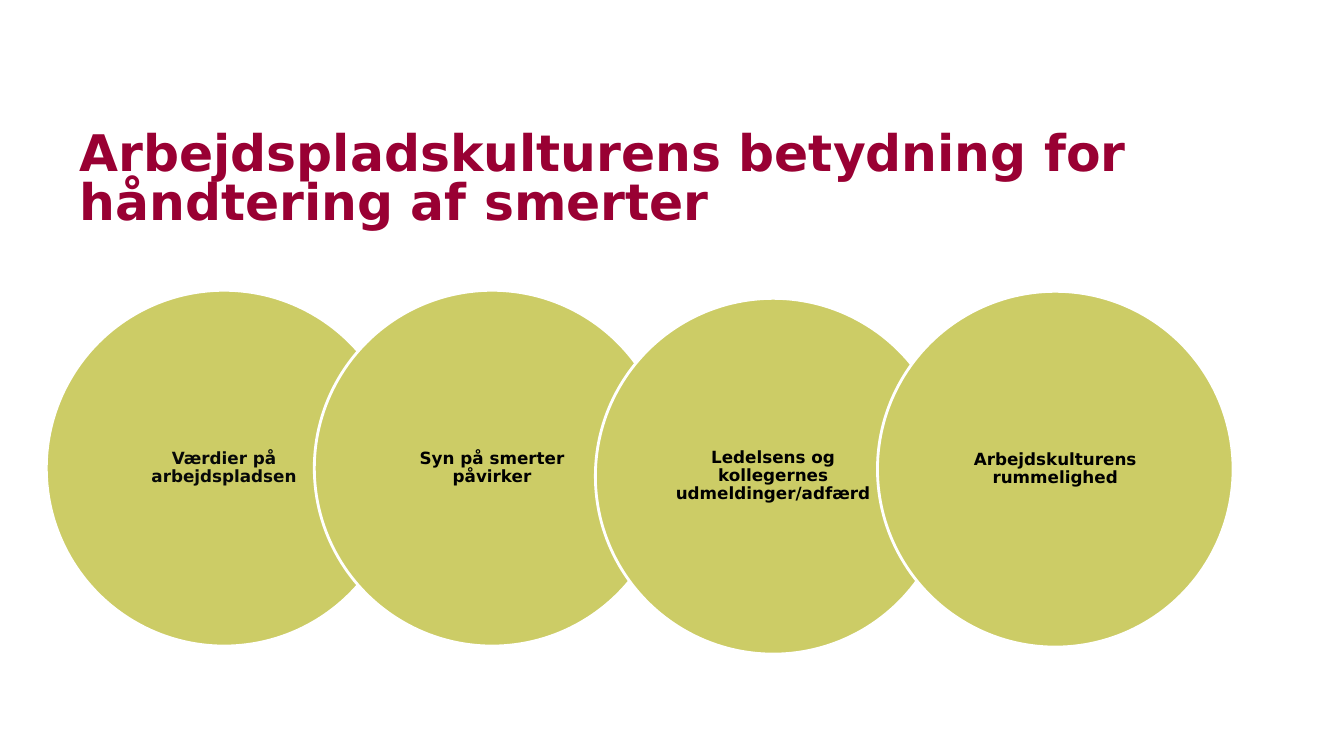
from dataclasses import dataclass

from pptx import Presentation
from pptx.dml.color import RGBColor
from pptx.enum.shapes import MSO_SHAPE
from pptx.enum.text import MSO_ANCHOR, MSO_AUTO_SIZE, PP_ALIGN
from pptx.slide import Slide
from pptx.text.text import TextFrame
from pptx.util import Emu, Pt

OVAL = MSO_SHAPE.OVAL
MIDDLE, BOTTOM = MSO_ANCHOR.MIDDLE, MSO_ANCHOR.BOTTOM
LEFT, CENTER = PP_ALIGN.LEFT, PP_ALIGN.CENTER
NO_AUTOFIT = MSO_AUTO_SIZE.NONE

EMU_PER_PX = 9144
DIAMETER = 353
FONT = "DejaVu Sans"
OLIVE, WHITE, BLACK, CRIMSON = "CCCC66", "FFFFFF", "000000", "990033"
TITLE_LINES = ["Arbejdspladskulturens betydning for", "håndtering af smerter"]


@dataclass(frozen=True)
class Circle:
    left: int
    top: int
    label: str
    ink: str = BLACK


CIRCLES = [
    Circle(46, 288, "Værdier på arbejdspladsen", "070908"),
    Circle(312, 288, "Syn på smerter påvirker"),
    Circle(591, 296, "Ledelsens og kollegernes udmeldinger/adfærd"),
    Circle(871, 289, "Arbejdskulturens rummelighed"),
]


def px(length: int) -> Emu:
    return Emu(length * EMU_PER_PX)


def color(value: str) -> RGBColor:
    return RGBColor.from_string(value)


def set_frame(frame: TextFrame, anchor: MSO_ANCHOR, side: int, edge: int) -> None:
    frame.word_wrap = True
    frame.auto_size = NO_AUTOFIT
    frame.vertical_anchor = anchor
    frame.margin_left = frame.margin_right = px(side)
    frame.margin_top = frame.margin_bottom = px(edge)


def write(frame: TextFrame, lines: list[str], size: int, ink: str,
          align: PP_ALIGN, spacing: float) -> None:
    para = frame.paragraphs[0]
    para.alignment = align
    para.line_spacing = spacing
    para.space_before = Pt(0)
    for index, line in enumerate(lines):
        if index:
            para.add_line_break()
        span = para.add_run()
        span.text = line
        span.font.name = FONT
        span.font.size = Pt(size)
        span.font.bold = True
        span.font.color.rgb = color(ink)


def draw_circle(page: Slide, circle: Circle) -> None:
    shape = page.shapes.add_shape(
        OVAL, px(circle.left), px(circle.top), px(DIAMETER), px(DIAMETER))
    shape.shadow.inherit = False
    shape.fill.solid()
    shape.fill.fore_color.rgb = color(OLIVE)
    shape.line.color.rgb = color(WHITE)
    shape.line.width = Pt(2)
    set_frame(shape.text_frame, MIDDLE, 19, 2)
    write(shape.text_frame, [circle.label], 12, circle.ink, CENTER, 0.9)


def draw_title(page: Slide) -> None:
    title = page.shapes.title
    title.left, title.top = px(79), px(130)
    title.width, title.height = px(1103), px(98)
    set_frame(title.text_frame, BOTTOM, 0, 0)
    write(title.text_frame, TITLE_LINES, 36, CRIMSON, LEFT, 0.8)


def main() -> None:
    """Build the slide on workplace culture and pain management."""
    deck = Presentation()
    deck.slide_width, deck.slide_height = px(1334), px(750)
    page = deck.slides.add_slide(deck.slide_layouts.get_by_name("Title Only"))
    draw_title(page)
    for circle in CIRCLES:
        draw_circle(page, circle)
    deck.save("out.pptx")


if __name__ == "__main__":
    main()
